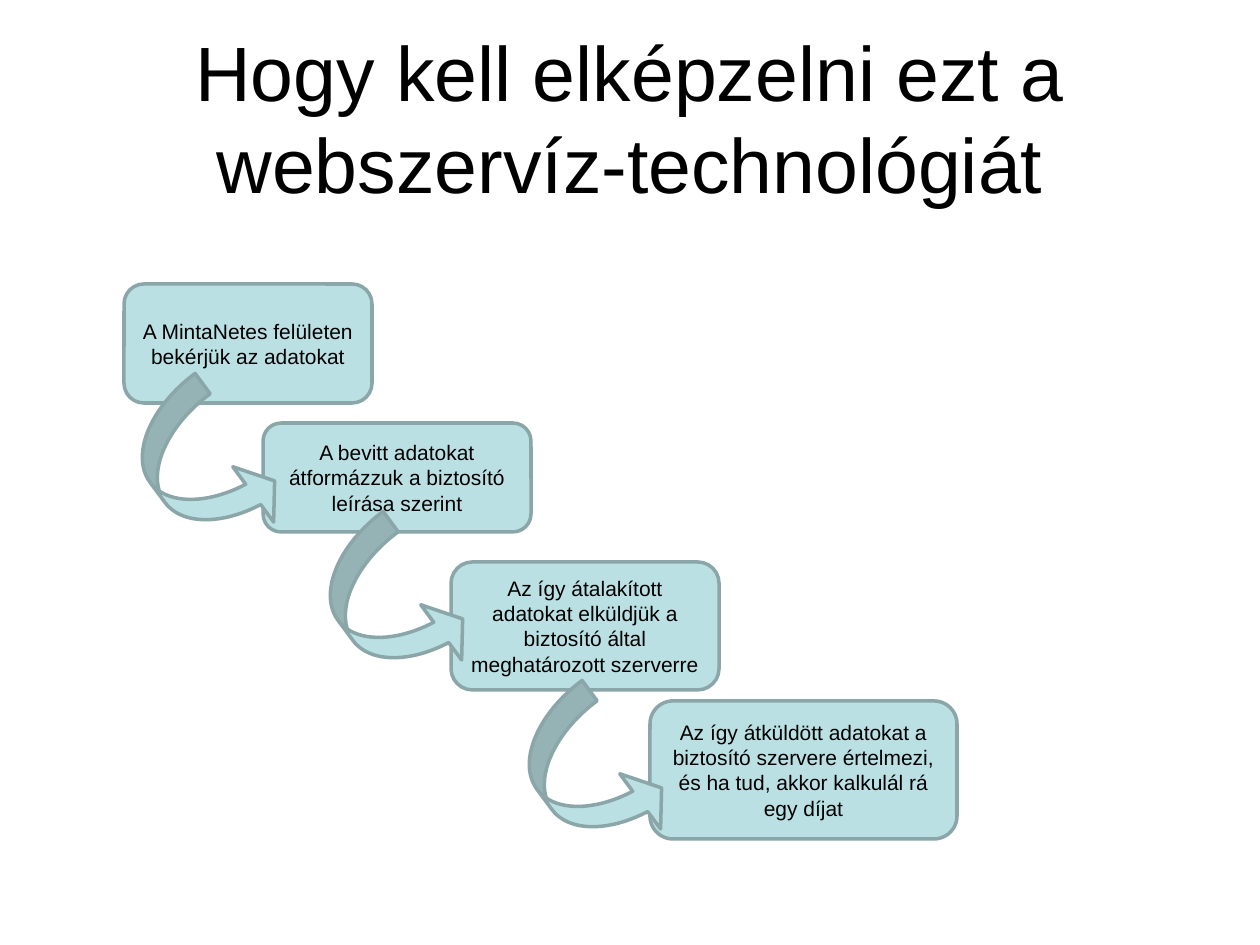
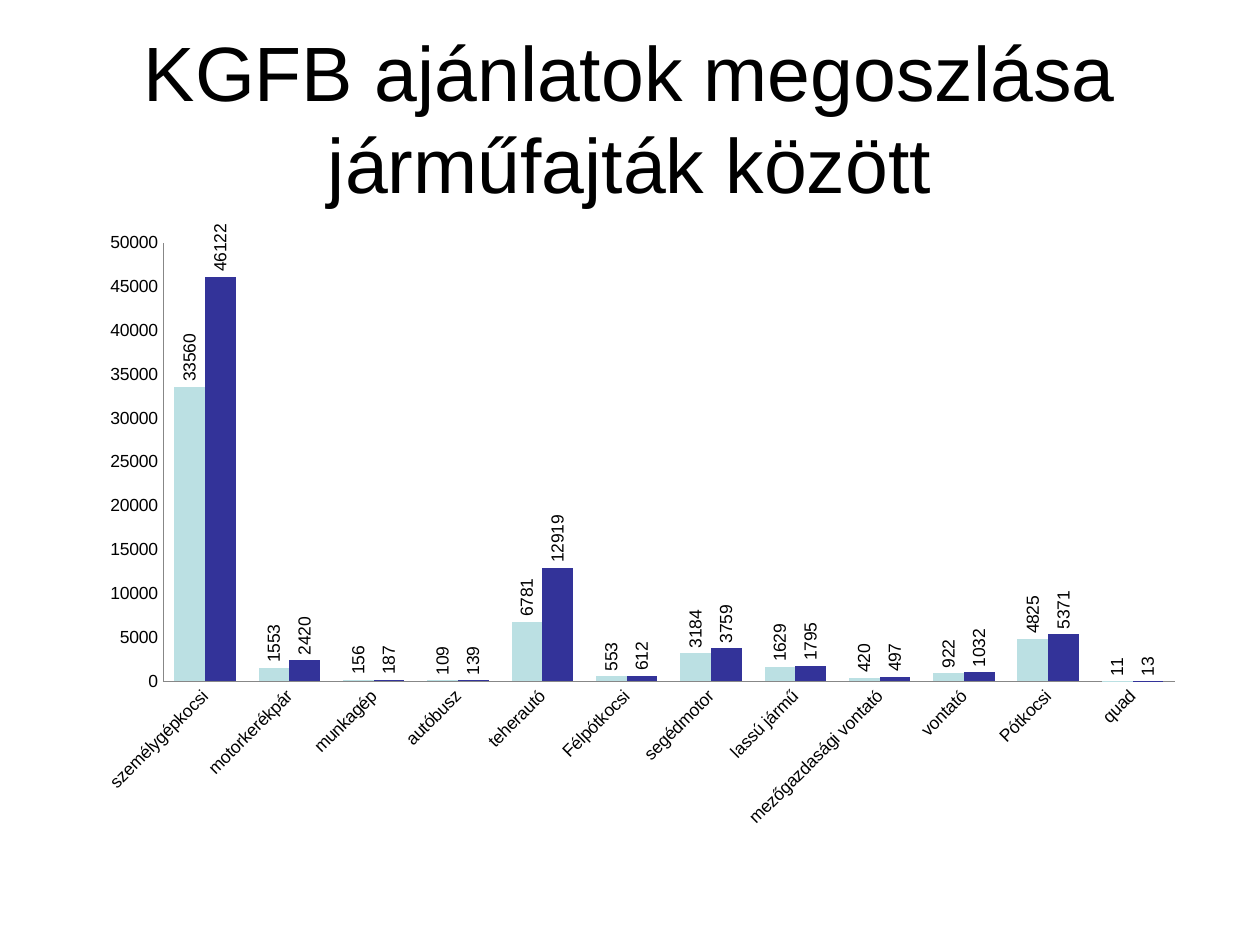
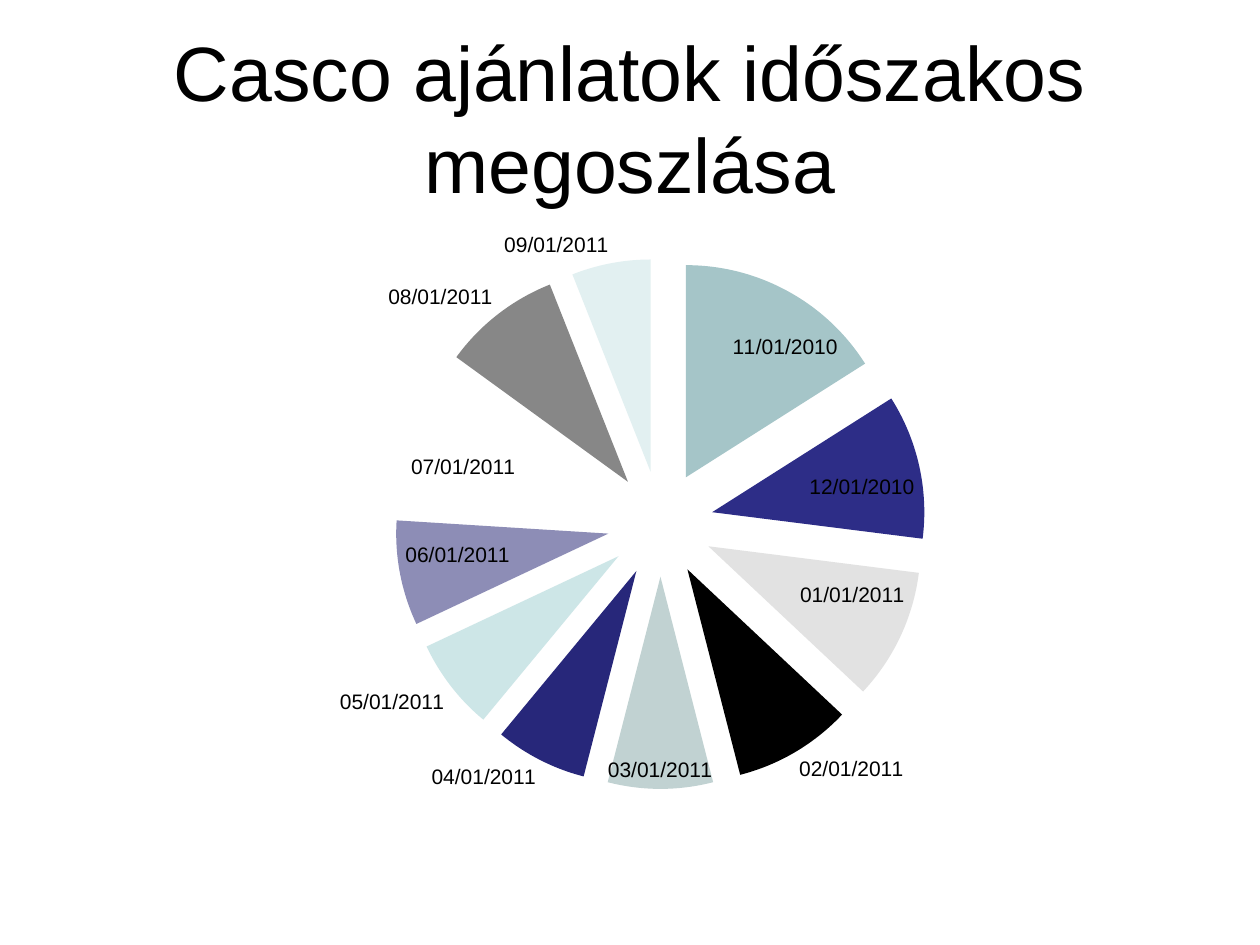
"""Build three slides on a web service: a process cascade, a column chart and a pie chart."""
from lxml.etree import SubElement
from pptx import Presentation
from pptx.chart.data import CategoryChartData
from pptx.dml.color import RGBColor
from pptx.enum.chart import XL_CHART_TYPE, XL_LABEL_POSITION, XL_TICK_MARK
from pptx.enum.shapes import MSO_SHAPE
from pptx.enum.text import MSO_ANCHOR, PP_ALIGN
from pptx.oxml.ns import qn
from pptx.util import Emu, Pt

FONT = "Arial"
BLACK = "000000"
AQUA = "BBE0E3"
AQUA_EDGE = "8AA6A8"
INDIGO = "333399"
AXIS_GREY = "878787"


def px(length):
    return Emu(round(length * 914400 / 126))


def rgb(color):
    return RGBColor.from_string(color)


presentation = Presentation()
presentation.slide_width = px(1260)
presentation.slide_height = px(945)

titles = [
    "Hogy kell elképzelni ezt a webszervíz-technológiát",
    "KGFB ajánlatok megoszlása járműfajták között",
    "Casco ajánlatok időszakos megoszlása",
]
for title in titles:
    slide = presentation.slides.add_slide(presentation.slide_layouts[6])
    title_box = slide.shapes.add_textbox(px(63), px(38), px(1134), px(157))
    text_frame = title_box.text_frame
    text_frame.word_wrap = True
    text_frame.vertical_anchor = MSO_ANCHOR.MIDDLE
    text_frame.text = title
    paragraph = text_frame.paragraphs[0]
    paragraph.alignment = PP_ALIGN.CENTER
    paragraph.font.size = Pt(44)
    paragraph.font.name = FONT
    paragraph.font.color.rgb = rgb(BLACK)
process_slide, vehicle_slide, period_slide = presentation.slides

process = MSO_SHAPE.FLOWCHART_ALTERNATE_PROCESS
arrow = MSO_SHAPE.CURVED_RIGHT_ARROW
cascade = [
    (MSO_SHAPE.ROUNDED_RECTANGLE, 124, 284, 248, 119,
     "A MintaNetes felületen bekérjük az adatokat"),
    (process, 263, 423, 268, 109,
     "A bevitt adatokat átformázzuk a biztosító leírása szerint"),
    (process, 451, 562, 268, 128,
     "Az így átalakított adatokat elküldjük a biztosító által meghatározott szerverre"),
    (process, 650, 701, 307, 138,
     "Az így átküldött adatokat a biztosító szervere értelmezi, "
     "és ha tud, akkor kalkulál rá egy díjat"),
    (arrow, 154, 387, 101, 168, ""),
    (arrow, 342, 525, 101, 168, ""),
    (arrow, 541, 694, 101, 168, ""),
]
for kind, left, top, width, height, text in cascade:
    shape = process_slide.shapes.add_shape(kind, px(left), px(top), px(width), px(height))
    shape.shadow.inherit = False
    shape.fill.solid()
    shape.fill.fore_color.rgb = rgb(AQUA)
    shape.line.color.rgb = rgb(AQUA_EDGE)
    shape.line.width = Pt(2)
    if kind == arrow:
        shape.rotation = 323.5
        shape.adjustments[1] = 0.68
        continue
    text_frame = shape.text_frame
    text_frame.word_wrap = True
    text_frame.vertical_anchor = MSO_ANCHOR.MIDDLE
    text_frame.text = text
    paragraph = text_frame.paragraphs[0]
    paragraph.alignment = PP_ALIGN.CENTER
    paragraph.font.size = Pt(12)
    paragraph.font.name = FONT
    paragraph.font.color.rgb = rgb(BLACK)

vehicle_data = CategoryChartData()
vehicle_data.categories = [
    "személygépkocsi", "motorkerékpár", "munkagép", "autóbusz", "teherautó", "Félpótkocsi",
    "segédmotor", "lassú jármű", "mezőgazdasági vontató", "vontató", "Pótkocsi", "quad",
]
vehicle_data.add_series(
    "Series 1", [33560, 1553, 156, 109, 6781, 553, 3184, 1629, 420, 922, 4825, 11])
vehicle_data.add_series(
    "Series 2", [46122, 2420, 187, 139, 12919, 612, 3759, 1795, 497, 1032, 5371, 13])
vehicle_chart = vehicle_slide.shapes.add_chart(
    XL_CHART_TYPE.COLUMN_CLUSTERED, px(85), px(218), px(1112), px(618), vehicle_data).chart

period_data = CategoryChartData()
period_data.categories = ["11/01/2010", "12/01/2010"] + [
    f"{month:02}/01/2011" for month in range(1, 10)]
period_data.add_series("Series 1", [16, 11, 10, 9, 8, 7, 7, 8, 9, 9, 6])
period_chart = period_slide.shapes.add_chart(
    XL_CHART_TYPE.PIE, px(105), px(215), px(1111), px(624), period_data).chart

chart_styles = [
    (vehicle_chart, 10, (0.07, 0.04, 0.91, 0.71)),
    (period_chart, 12, (0.26, 0.07, 0.48, 0.85)),
]
for chart, font_size, plot_box in chart_styles:
    chart.has_title = False
    chart.has_legend = False
    chart.font.size = Pt(font_size)
    chart.font.name = FONT
    chart.font.color.rgb = rgb(BLACK)
    plot_area = chart.element.xpath("c:chart/c:plotArea")[0]
    for old_layout in plot_area.findall(qn("c:layout")):
        plot_area.remove(old_layout)
    layout = SubElement(plot_area, qn("c:layout"))
    plot_area.insert(0, layout)
    manual = SubElement(layout, qn("c:manualLayout"))
    settings = [("layoutTarget", "inner"), ("xMode", "edge"), ("yMode", "edge")]
    settings += zip("xywh", plot_box)
    for name, value in settings:
        SubElement(manual, qn(f"c:{name}")).set("val", str(value))

plot = vehicle_chart.plots[0]
plot.vary_by_categories = False
plot.gap_width = 75
plot.overlap = 0
for series, color in zip(plot.series, [AQUA, INDIGO]):
    series.invert_if_negative = False
    series.format.fill.solid()
    series.format.fill.fore_color.rgb = rgb(color)
    labels = series.data_labels
    labels.show_value = True
    labels.position = XL_LABEL_POSITION.OUTSIDE_END
    labels.font.size = Pt(10)
for axis in (vehicle_chart.category_axis, vehicle_chart.value_axis):
    axis.has_major_gridlines = False
    axis.major_tick_mark = XL_TICK_MARK.NONE
    axis.minor_tick_mark = XL_TICK_MARK.NONE
    axis.format.line.color.rgb = rgb(AXIS_GREY)
    axis.format.line.width = Pt(0.25)
    axis.tick_labels.font.size = Pt(10)
vehicle_chart.value_axis.minimum_scale = 0
vehicle_chart.value_axis.maximum_scale = 50000
vehicle_chart.value_axis.major_unit = 5000
for parent, degrees in [("c:dLbls", -90), ("c:catAx", -45)]:
    for body in vehicle_chart.element.xpath(f".//{parent}/c:txPr/a:bodyPr"):
        body.set("rot", str(degrees * 60000))
        body.set("vert", "horz")

plot = period_chart.plots[0]
plot.vary_by_categories = True
series = plot.series[0]
series_element = period_chart.element.xpath(".//c:ser")[0]
explosion = SubElement(series_element, qn("c:explosion"))
explosion.set("val", "25")
series_element.find(qn("c:tx")).addnext(explosion)
slice_colors = [
    "A5C5C8", "2D2D87", "E2E2E2", BLACK, "C1D2D2", "27277A",
    "CDE6E7", "8D8DB6", "FFFFFF", "878787", "E2F0F1",
]
for index, color in enumerate(slice_colors):
    fill = series.points[index].format.fill
    fill.solid()
    fill.fore_color.rgb = rgb(color)
labels = series.data_labels
labels.show_value = False
labels.show_percentage = False
labels.show_category_name = True
labels.position = XL_LABEL_POSITION.OUTSIDE_END
labels.font.size = Pt(12)
label_positions = dict.fromkeys((0, 1, 2, 7, 8), XL_LABEL_POSITION.BEST_FIT)
label_positions[4] = XL_LABEL_POSITION.INSIDE_END
for index, position in label_positions.items():
    label = series.points[index].data_label
    label.font.size = Pt(12)
    label.position = position
for tag, value in [("c:showVal", "0"), ("c:showCatName", "1")]:
    for flag in period_chart.element.xpath(f".//c:dLbl/{tag}"):
        flag.set("val", value)

presentation.save("out.pptx")
